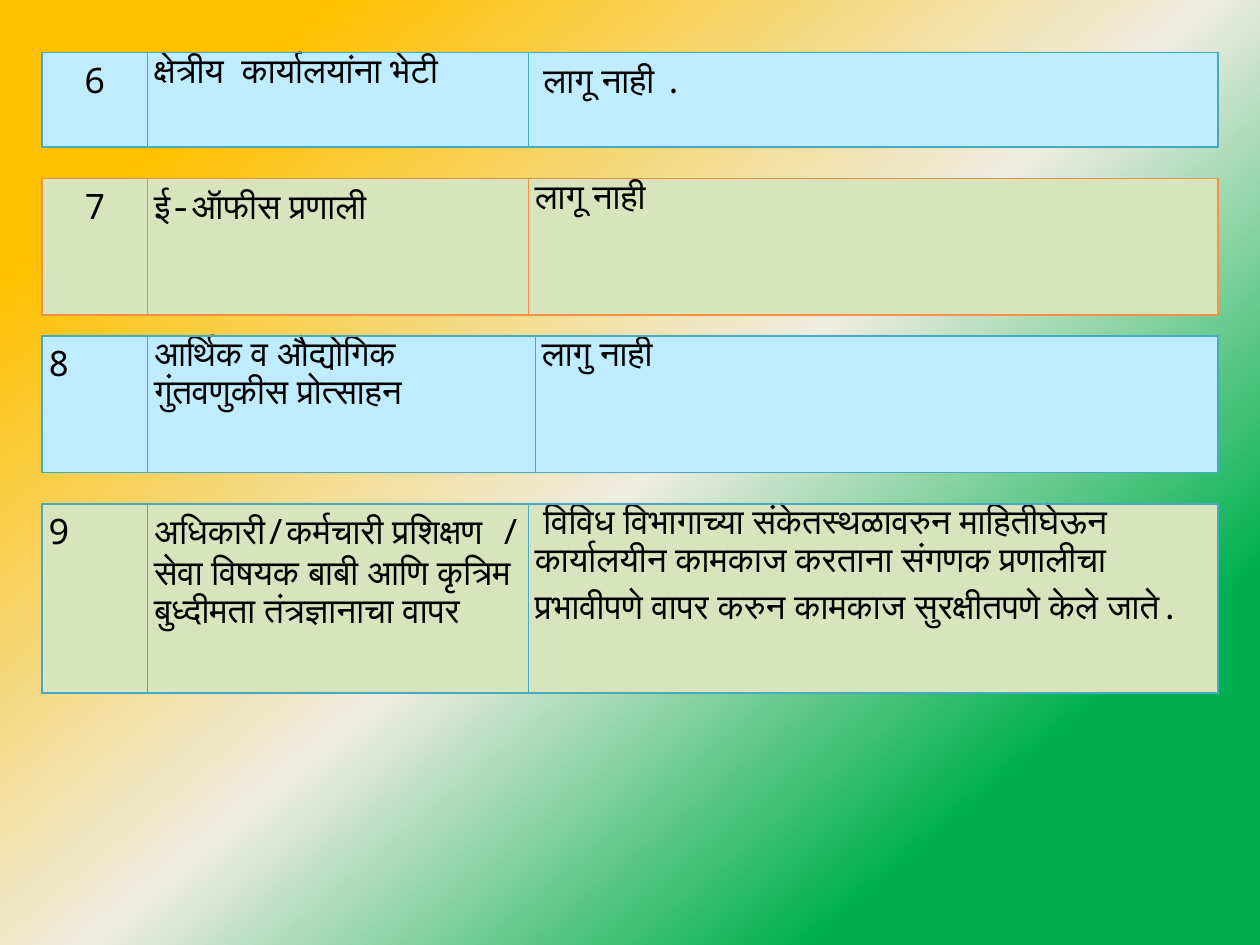
from copy import deepcopy

from lxml import etree
from pptx import Presentation
from pptx.dml import color
from pptx.enum import text
from pptx.oxml import ns
from pptx.util import Pt

FONT = "Noto Sans Mono"
BLUE, GREEN = "BFEDFF", "D7E4BD"
TEAL, ORANGE = "46AAC5", "F69240"
CENTER, LEFT = text.PP_ALIGN.CENTER, text.PP_ALIGN.LEFT


def rgb(value):
    return color.RGBColor.from_string(value)


def add_borders(cell, value):
    """Draw all four sides; call before filling, as the schema puts lines first."""
    properties = cell._tc.get_or_add_tcPr()
    for side in ("lnL", "lnR", "lnT", "lnB"):
        line = etree.SubElement(properties, ns.qn(f"a:{side}"), w=str(Pt(0.75)))
        fill = etree.SubElement(line, ns.qn("a:solidFill"))
        etree.SubElement(fill, ns.qn("a:srgbClr"), val=value)


prs = Presentation()
prs.slide_width, prs.slide_height = Pt(720), Pt(540)
slide = prs.slides.add_slide(prs.slide_layouts[6])

# Background: diagonal from green (lower right) to amber (upper left)
backdrop = slide.background.fill
backdrop.gradient()
backdrop.gradient_angle = 130
stop_list = slide._element.find(".//" + ns.qn("a:gsLst"))
stop_list.append(deepcopy(stop_list[-1]))
tricolour = [(0.19, "00B050"), (0.49, "EEECE1"), (0.86, "FFC000")]
for stop, (position, value) in zip(backdrop.gradient_stops, tricolour):
    stop.position = position
    stop.color.rgb = rgb(value)

# One single-row table per item:
# top, height, second column width, fill, border, number alignment, texts
items = [
    (30, 54, 217.5, BLUE, TEAL, CENTER,
     ("6", "क्षेत्रीय  कार्यालयांना भेटी", " लागू नाही .")),
    (102, 78, 217.5, GREEN, ORANGE, CENTER,
     ("7", "ई-ऑफीस प्रणाली", "लागू नाही")),
    (192, 78, 221.5, BLUE, TEAL, LEFT,
     ("8", "आर्थिक व औद्योगिक  गुंतवणुकीस प्रोत्साहन", "लागु नाही")),
    (288, 108, 217.5, GREEN, TEAL, LEFT,
     ("9", "अधिकारी/कर्मचारी प्रशिक्षण  / सेवा विषयक बाबी आणि कृत्रिम "
           "बुध्दीमता तंत्रज्ञानाचा वापर",
      " विविध विभागाच्या संकेतस्थळावरुन माहितीघेऊन कार्यालयीन कामकाज करताना "
      "संगणक प्रणालीचा प्रभावीपणे वापर करुन कामकाज सुरक्षीतपणे केले जाते.")),
]
total_width, number_width = 672, 60.5

for top, height, topic_width, fill, border, number_align, texts in items:
    table = slide.shapes.add_table(
        1, 3, Pt(24), Pt(top), Pt(total_width), Pt(height)).table
    table.first_row = table.horz_banding = False
    widths = (number_width, topic_width, total_width - number_width - topic_width)
    for column, width in zip(table.columns, widths):
        column.width = Pt(width)

    for cell, words, align in zip(table.rows[0].cells, texts, (number_align, LEFT, LEFT)):
        add_borders(cell, border)
        cell.fill.solid()
        cell.fill.fore_color.rgb = rgb(fill)
        cell.margin_left = cell.margin_right = Pt(3.6)
        cell.margin_top = cell.margin_bottom = 0
        paragraph = cell.text_frame.paragraphs[0]
        paragraph.text = words
        paragraph.alignment = align
        paragraph.line_spacing = 1.07
        font = paragraph.runs[0].font
        font.name, font.size = FONT, Pt(20)
        font.color.rgb = rgb("000000")

prs.save("out.pptx")
